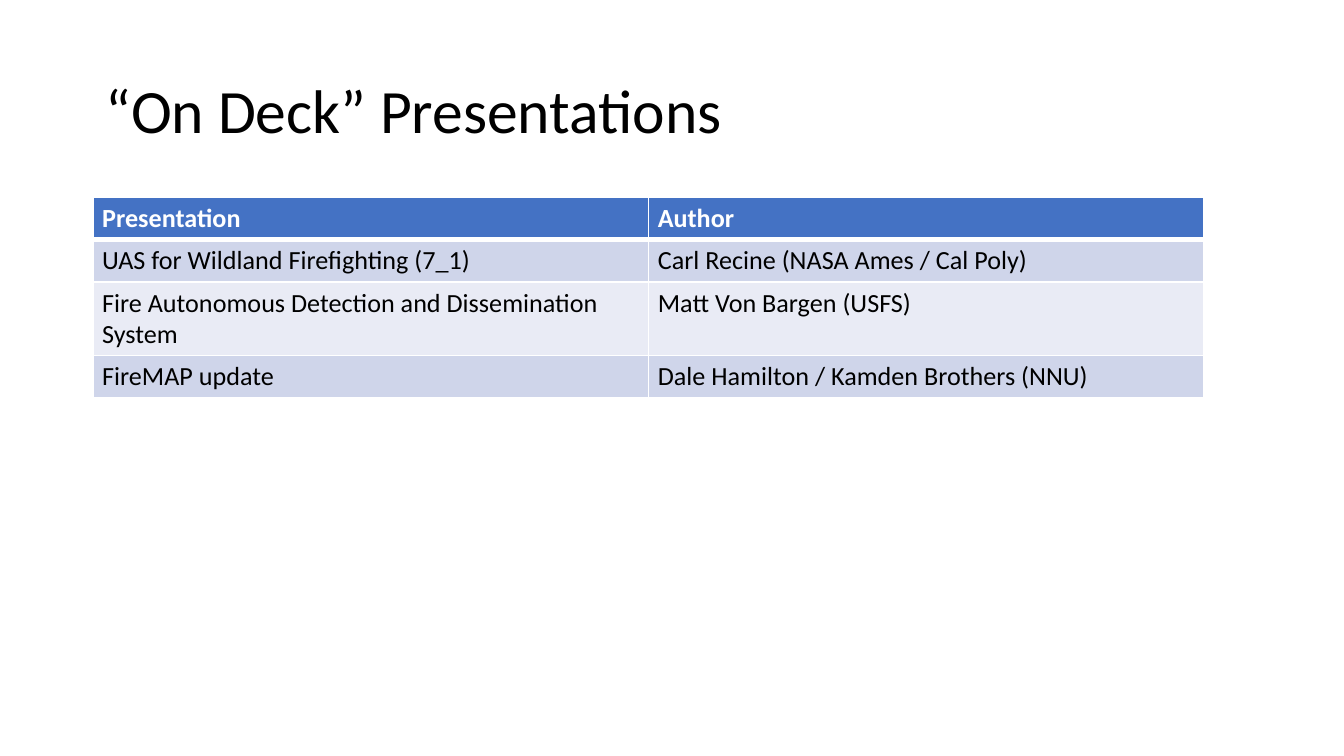
from lxml import etree
from pptx import Presentation
from pptx import util as u
from pptx.dml.color import RGBColor
from pptx.enum import text
from pptx.oxml.ns import qn

COLORS = {
    "ink": "000000",
    "white": "FFFFFF",
    "header": "4472C4",
    "band_dark": "CFD5EA",
    "band_light": "E9EBF5",
}
FONT = "Calibri"
SLIDE_WIDTH = 10
ROWS = [
    ("Presentation", "Author"),
    ("UAS for Wildland Firefighting (7_1)", "Carl Recine (NASA Ames / Cal Poly)"),
    ("Fire Autonomous Detection and Dissemination System", "Matt Von Bargen (USFS)"),
    ("FireMAP update", "Dale Hamilton / Kamden Brothers (NNU)"),
]
ROW_HEIGHTS = [0.3, 0.3, 0.53, 0.3]


def write(frame, words, size, color="ink", bold=False, spacing=1.0):
    frame.word_wrap = True
    paragraph = frame.paragraphs[0]
    paragraph.line_spacing = spacing
    run = paragraph.add_run()
    run.text = words
    run.font.name = FONT
    run.font.size = u.Pt(size)
    run.font.bold = bold
    run.font.color.rgb = RGBColor.from_string(COLORS[color])


def set_borders(cell, top=1, bottom=1):
    properties = cell._tc.get_or_add_tcPr()
    for side, width in (("L", 1), ("R", 1), ("T", top), ("B", bottom)):
        line = etree.SubElement(properties, qn(f"a:ln{side}"), w=str(u.Pt(width)))
        fill = etree.SubElement(line, qn("a:solidFill"))
        etree.SubElement(fill, qn("a:srgbClr"), val=COLORS["white"])


def add_title(slide, left, top, width, height):
    box = slide.shapes.add_textbox(*map(u.Inches, (left, top, width, height)))
    frame = box.text_frame
    frame.vertical_anchor = text.MSO_ANCHOR.MIDDLE
    frame.margin_left = frame.margin_right = u.Inches(0.1)
    frame.margin_top = frame.margin_bottom = u.Inches(0.04)
    write(frame, "“On Deck” Presentations", 33, spacing=0.9)


def add_schedule(slide, left, top, width):
    box = map(u.Inches, (left, top, width, sum(ROW_HEIGHTS)))
    table = slide.shapes.add_table(len(ROWS), len(ROWS[0]), *box).table
    for column in table.columns:
        column.width = u.Inches(width / len(ROWS[0]))

    for r, (entries, height) in enumerate(zip(ROWS, ROW_HEIGHTS)):
        table.rows[r].height = u.Inches(height)
        is_header = r == 0
        band = "header" if is_header else "band_dark" if r % 2 else "band_light"
        for c, entry in enumerate(entries):
            cell = table.cell(r, c)
            cell.margin_left = cell.margin_right = u.Inches(0.07)
            cell.margin_top = cell.margin_bottom = u.Inches(0.04)
            # The header is set off by a thicker rule
            set_borders(cell, top=3 if r == 1 else 1, bottom=3 if is_header else 1)
            cell.fill.solid()
            cell.fill.fore_color.rgb = RGBColor.from_string(COLORS[band])
            write(cell.text_frame, entry, 14,
                  color="white" if is_header else "ink", bold=is_header)


def main():
    deck = Presentation()
    # Widescreen page, 16:9
    deck.slide_width = u.Inches(SLIDE_WIDTH)
    deck.slide_height = u.Inches(SLIDE_WIDTH * 9 / 16)
    slide = deck.slides.add_slide(deck.slide_layouts[6])
    add_title(slide, 0.69, 0.3, 8.62, 1.09)
    add_schedule(slide, 0.69, 1.47, 8.27)
    deck.save("out.pptx")


if __name__ == "__main__":
    main()
